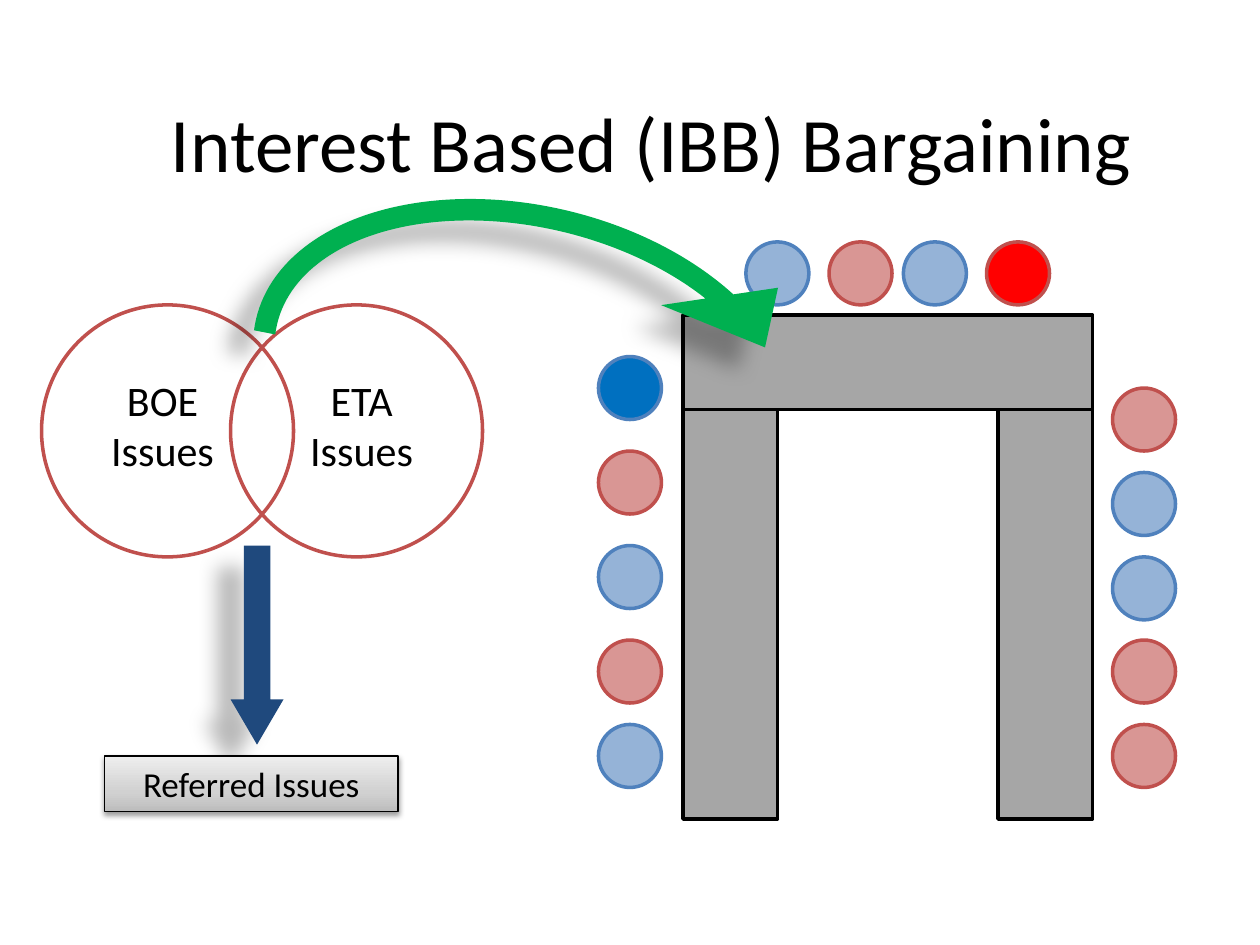
from lxml.etree import SubElement
from pptx import Presentation
from pptx.dml.color import RGBColor
from pptx.enum.shapes import MSO_SHAPE
from pptx.enum.text import MSO_ANCHOR, PP_ALIGN
from pptx.oxml.ns import qn
from pptx.util import Inches, Pt

TITLE = ("Interest Based (IBB) Bargaining", (0.67, 0.5, 9, 1.25), 44)
LABELS = [
    ("BOE Issues", (0.75, 2.92, 1.08, 0.91), 24),
    ("ETA\nIssues", (2.33, 2.92, 1.08, 0.91), 24),
]
ISSUES = [(1.83, 2.42, 2, 2), (0.33, 2.42, 2, 2)]
TABLE = [(5.42, 3.25, 0.75, 3.25), (7.92, 3.25, 0.75, 3.25), (5.42, 2.5, 3.25, 0.75)]

# Team: fill, line
TEAMS = {
    "board": ("95B3D7", "4F81BD"),
    "union": ("D99694", "C0504D"),
    "board lead": ("0070C0", "4F81BD"),
    "union lead": ("FF0000", "C0504D"),
}
SEAT = 0.5
TOP = [(5.92, "board"), (6.58, "union"), (7.17, "board"), (7.83, "union lead")]
LEFT = [(2.83, "board lead"), (3.58, "union"), (4.33, "board"),
        (5.08, "union"), (5.75, "board")]
RIGHT = [(3.08, "union"), (3.75, "board"), (4.42, "board"),
         (5.08, "union"), (5.75, "union")]
SEATS = ([(x, 1.92, team) for x, team in TOP]
         + [(4.75, y, team) for y, team in LEFT]
         + [(8.83, y, team) for y, team in RIGHT])

# Shadow: opacity %, blur pt, distance pt, angle
FAR = (28, 11.8, 19.7, 141)
NEAR = (38, 3.1, 1.6, 90)
ARROWS = [
    (MSO_SHAPE.CIRCULAR_ARROW, (1.59, 1.25, 5.17, 3.58), "00B050", 13.4,
     (0.048, 9.372, 193.502, 106.54, 0.131)),
    (MSO_SHAPE.DOWN_ARROW, (1.83, 4.33, 0.42, 1.58), "1F497D", 0, (0.5, 0.854)),
]
REFERRED = ("Referred Issues", (0.83, 6, 2.33, 0.44), 20)
SHADES = [(0, "BDBDBD"), (35, "D1D1D1"), (100, "EEEEEE")]


def color(code):
    return RGBColor.from_string(code)


def draw(slide, kind, box, fill=None, line=None, width=2):
    shape = slide.shapes.add_shape(kind, *map(Inches, box))
    shape.shadow.inherit = False
    if fill:
        shape.fill.solid()
        shape.fill.fore_color.rgb = color(fill)
    else:
        shape.fill.background()
    if line:
        shape.line.color.rgb = color(line)
        shape.line.width = Pt(width)
    else:
        shape.line.fill.background()
    return shape


def write(shape, text, size, anchor=MSO_ANCHOR.TOP):
    frame = shape.text_frame
    frame.text = text
    for name, value in {"word_wrap": True, "vertical_anchor": anchor}.items():
        setattr(frame, name, value)
    style = {"name": "Calibri", "size": Pt(size)}
    for para in frame.paragraphs:
        para.alignment = PP_ALIGN.CENTER
        font = para.runs[0].font
        for name, value in style.items():
            setattr(font, name, value)
        font.color.rgb = color("000000")


def label(slide, text, box, size, anchor=MSO_ANCHOR.TOP):
    write(slide.shapes.add_textbox(*map(Inches, box)), text, size, anchor)


def node(parent, tag, **attrs):
    return SubElement(parent, qn(tag), {k: str(v) for k, v in attrs.items()})


def shade(shape, alpha, blur, dist, angle):
    """Give the shape an outer shadow."""
    effects = shape._element.spPr.find(qn("a:effectLst"))
    outer = node(effects, "a:outerShdw", blurRad=Pt(blur), dist=Pt(dist),
                 dir=angle * 60000, algn="ctr", rotWithShape=0)
    node(node(outer, "a:srgbClr", val="000000"), "a:alpha", val=alpha * 1000)


def blend(shape, stops, angle):
    """Fill the shape with a linear gradient of any number of stops."""
    shape.fill.gradient()
    grad = shape._element.spPr.find(qn("a:gradFill"))
    for child in list(grad):
        grad.remove(child)
    row = node(grad, "a:gsLst")
    for place, code in stops:
        node(node(row, "a:gs", pos=place * 1000), "a:srgbClr", val=code)
    node(grad, "a:lin", ang=angle * 60000, scaled=0)


def main():
    deck = Presentation()
    deck.slide_width, deck.slide_height = Inches(10), Inches(7.5)
    slide = deck.slides.add_slide(deck.slide_layouts[6])

    for box in ISSUES:
        draw(slide, MSO_SHAPE.OVAL, box, line="C0504D")
    label(slide, *TITLE, anchor=MSO_ANCHOR.MIDDLE)
    for x, y, team in SEATS:
        draw(slide, MSO_SHAPE.OVAL, (x, y, SEAT, SEAT), *TEAMS[team])
    for box in TABLE:
        draw(slide, MSO_SHAPE.RECTANGLE, box, "A6A6A6", "000000")
    for item in LABELS:
        label(slide, *item)

    for kind, box, fill, turn, adjust in ARROWS:
        arrow = draw(slide, kind, box, fill)
        arrow.rotation = turn
        for i, value in enumerate(adjust):
            arrow.adjustments[i] = value
        shade(arrow, *FAR)

    text, box, size = REFERRED
    referred = draw(slide, MSO_SHAPE.RECTANGLE, box, line="000000", width=0.75)
    blend(referred, SHADES, 270)
    shade(referred, *NEAR)
    write(referred, text, size)

    deck.save("out.pptx")


if __name__ == "__main__":
    main()
